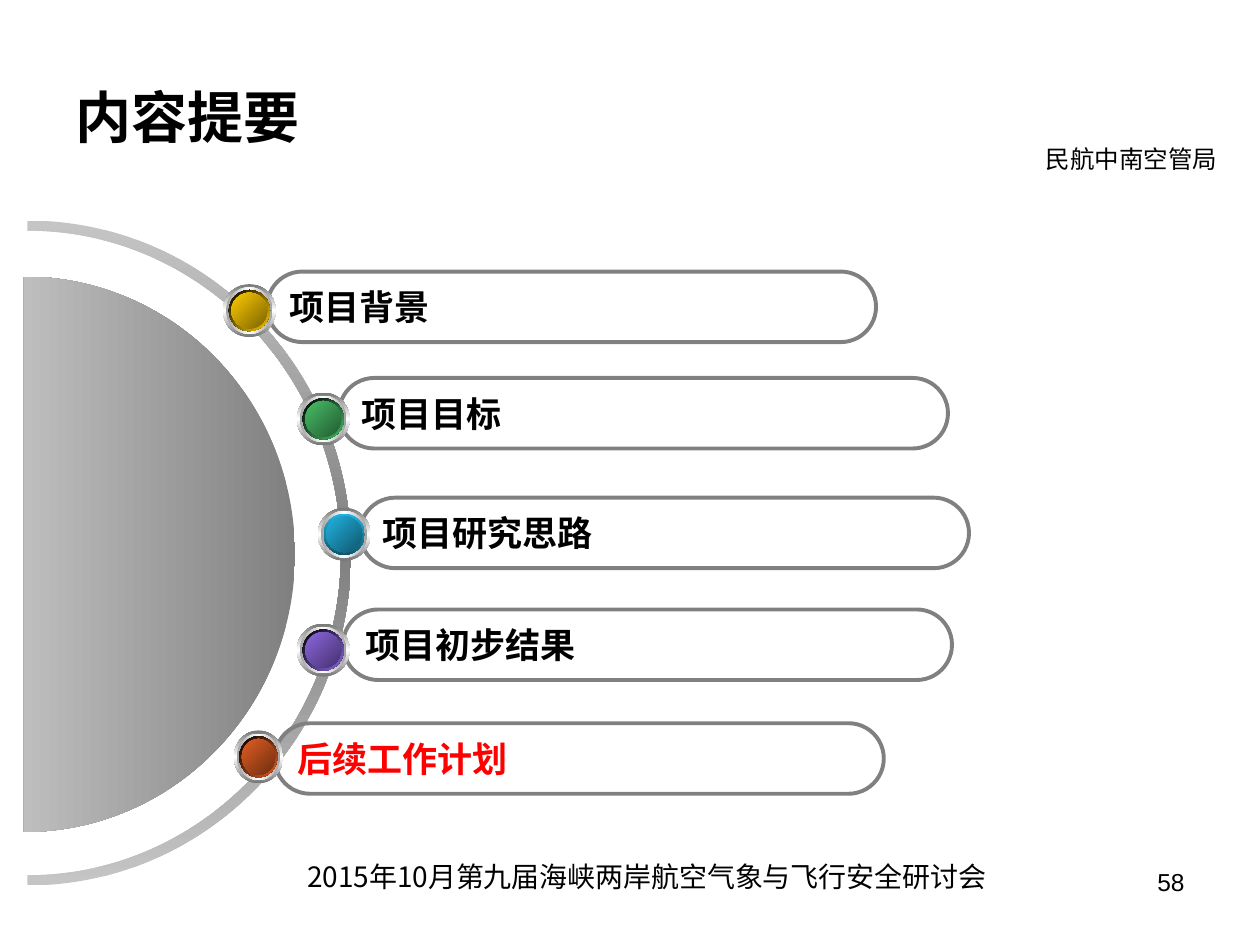
from lxml import etree
from pptx import Presentation
from pptx.dml.color import RGBColor
from pptx.enum.shapes import MSO_SHAPE
from pptx.enum.text import MSO_ANCHOR, PP_ALIGN
from pptx.oxml.ns import qn
from pptx.util import Pt

OVAL, PILL = MSO_SHAPE.OVAL, MSO_SHAPE.ROUNDED_RECTANGLE
LEFT, RIGHT = PP_ALIGN.LEFT, PP_ALIGN.RIGHT
TOP, MIDDLE = MSO_ANCHOR.TOP, MSO_ANCHOR.MIDDLE

CJK, LATIN = "Noto Sans CJK SC", "Arial"
COLORS = {
    "text": "000000", "current": "FF0000", "outline": "808080",
    "arc_end": "C5C5C5", "gray": "808080",
    "bezel": "767676", "inner_bezel": "A2A2A2", "white": "FFFFFF", "black": "000000",
    "gold": "FFCC00", "gold_dark": "7C6300",
    "green": "48BE67", "green_dark": "235C32",
    "blue": "21B3E1", "blue_dark": "10576D",
    "purple": "8D67E1", "purple_dark": "45326D",
    "orange": "E35E23", "orange_dark": "6E2E11",
}
BAR_SIZE = (348, 40.3)
BADGE_HEIGHT = 30.2
KAPPA = 0.5523  # Bezier handle length for a quarter ellipse

# label, bar left/top, badge left/top/width, hue, rim colours, rim angle, text colour
TOPICS = [
    ("项目背景", (152.6, 155.2), (127.4, 162.4, 30.2), "gold", ("black", "gold"), 45, "text"),
    ("项目目标", (193.7, 216), (169.6, 224.3, 30.2), "green", ("black", "green"), 45, "text"),
    ("项目研究思路", (205.7, 284.4), (181.6, 290.2, 30.2), "blue",
     ("blue", "blue_dark"), 90, "text"),
    ("项目初步结果", (196, 348.3), (169.6, 356.4, 30.2), "purple",
     ("black", "purple"), 45, "text"),
    ("后续工作计划", (157, 413.3), (133.7, 417.4, 28), "orange",
     ("black", "orange"), 45, "current"),
]


def rgb(name):
    return RGBColor.from_string(COLORS[name])


def fill_gradient(shape, names, angle):
    """Fill with evenly spaced colours, the angle running clockwise from rightwards."""
    shape.shadow.inherit = False
    shape.line.fill.background()
    shape.fill.gradient()
    gradient = shape._element.spPr.find(qn("a:gradFill"))
    stops = gradient.find(qn("a:gsLst"))
    for stop in list(stops):
        stops.remove(stop)
    for i, name in enumerate(names):
        stop = etree.SubElement(stops, qn("a:gs"), pos=str(100000 * i // (len(names) - 1)))
        etree.SubElement(stop, qn("a:srgbClr"), val=COLORS[name])
    direction = gradient.find(qn("a:lin"))
    direction.set("ang", str(angle * 60000))
    direction.set("scaled", "0")


def write(shape, text, size, font=CJK, color="text", bold=False, align=LEFT, anchor=TOP):
    frame = shape.text_frame
    frame.word_wrap = True
    frame.vertical_anchor = anchor
    paragraph = frame.paragraphs[0]
    paragraph.text = text
    paragraph.alignment = align
    paragraph.font.size = Pt(size)
    paragraph.font.name = font
    paragraph.font.bold = bold
    paragraph.font.color.rgb = rgb(color)
    properties = paragraph._p.pPr.find(qn("a:defRPr"))
    etree.SubElement(properties, qn("a:ea"), typeface=font)


def add_text(slide, box, text, size, **style):
    write(slide.shapes.add_textbox(*map(Pt, box)), text, size, **style)


def half_ellipse(center, radii):
    """Bezier points of the right half of an ellipse, from top to bottom."""
    (x, y), (rx, ry) = center, radii
    hx, hy = rx * KAPPA, ry * KAPPA
    return [(x, y - ry), (x + hx, y - ry), (x + rx, y - hy), (x + rx, y),
            (x + rx, y + hy), (x + hx, y + ry), (x, y + ry)]


def add_curved_outline(slide, box, arcs, names, angle):
    """Join the arcs into one closed outline inside a box turned by 90 degrees."""
    left, top, width, height = box
    corners = [(left, top), (left + width, top), (left + width, top + height),
               (left, top + height)]
    corners = [(Pt(x), Pt(y)) for x, y in corners]
    builder = slide.shapes.build_freeform(*corners[0])
    builder.add_line_segments(corners[1:])
    shape = builder.convert_to_shape()
    outline = next(shape._element.iter(qn("a:path")))
    for segment in list(outline):
        outline.remove(segment)

    def add_segment(kind, points):
        segment = etree.SubElement(outline, qn("a:" + kind))
        for x, y in points:
            across = y - top + (width - height) / 2
            down = left + (width + height) / 2 - x
            etree.SubElement(segment, qn("a:pt"), x=str(Pt(across)), y=str(Pt(down)))

    for i, arc in enumerate(arcs):
        add_segment("lnTo" if i else "moveTo", arc[:1])
        add_segment("cubicBezTo", arc[1:4])
        add_segment("cubicBezTo", arc[4:])
    etree.SubElement(outline, qn("a:close"))
    shape.rotation = 90
    fill_gradient(shape, names, angle)


def add_dial(slide, box):
    """Half disc inside a half ring, both open to the left."""
    left, top, width, height = box
    center = (left, top + height / 2)
    band = 5.8
    outer = half_ellipse(center, (width, height / 2))
    inner = half_ellipse(center, (width - band, height / 2 - band))
    add_curved_outline(slide, (left - 192.7, top + 2.2, height, 375.8),
                       (inner, outer[::-1]), ("arc_end", "gray", "arc_end"), 0)
    disc = half_ellipse((left - 2, center[1] + 0.7), (width - 30, height / 2 - 31.3))
    add_curved_outline(slide, (left - 161, top + 36, 317.5, 309.6),
                       (disc,), ("gray", "white"), 90)


def add_badge(slide, box, hue, rim, rim_angle):
    left, top, width, height = box
    layers = [
        (0, ("bezel", "white", "bezel"), 90),
        (0.06, ("inner_bezel", "white", "inner_bezel"), 0),
        (0.11, rim, rim_angle),
        (0.16, (hue, hue + "_dark"), 45),
    ]
    for inset, names, angle in layers:
        dx, dy = width * inset, height * inset
        oval = slide.shapes.add_shape(OVAL, Pt(left + dx), Pt(top + dy),
                                      Pt(width - 2 * dx), Pt(height - 2 * dy))
        fill_gradient(oval, names, angle)


def add_bar(slide, box, label, color):
    bar = slide.shapes.add_shape(PILL, *map(Pt, box))
    bar.adjustments[0] = 0.5
    bar.shadow.inherit = False
    bar.fill.background()
    bar.line.color.rgb = rgb("outline")
    bar.line.width = Pt(2.25)
    write(bar, label, 20, color=color, bold=True, anchor=MIDDLE)


def add_topics(slide):
    for label, bar, (left, top, width), hue, rim, rim_angle, color in TOPICS:
        add_bar(slide, bar + BAR_SIZE, label, color)
        add_badge(slide, (left, top, width, BADGE_HEIGHT), hue, rim, rim_angle)


def main():
    presentation = Presentation()
    presentation.slide_width, presentation.slide_height = Pt(720), Pt(540)
    slide = presentation.slides.add_slide(presentation.slide_layouts[6])
    add_text(slide, (516.2, 491.8, 167.8, 37.4), "58", 14, font=LATIN, align=RIGHT)
    add_text(slide, (590.4, 78.5, 129.6, 24.5), "民航中南空管局", 14)
    add_text(slide, (168.5, 487.4, 439.9, 26.6),
             "2015年10月第九届海峡两岸航空气象与飞行安全研讨会", 16)
    add_text(slide, (36, 21.6, 648, 90), "内容提要", 32, bold=True, anchor=MIDDLE)
    add_dial(slide, (15.6, 126, 185, 380))
    add_topics(slide)
    presentation.save("out.pptx")


if __name__ == "__main__":
    main()
